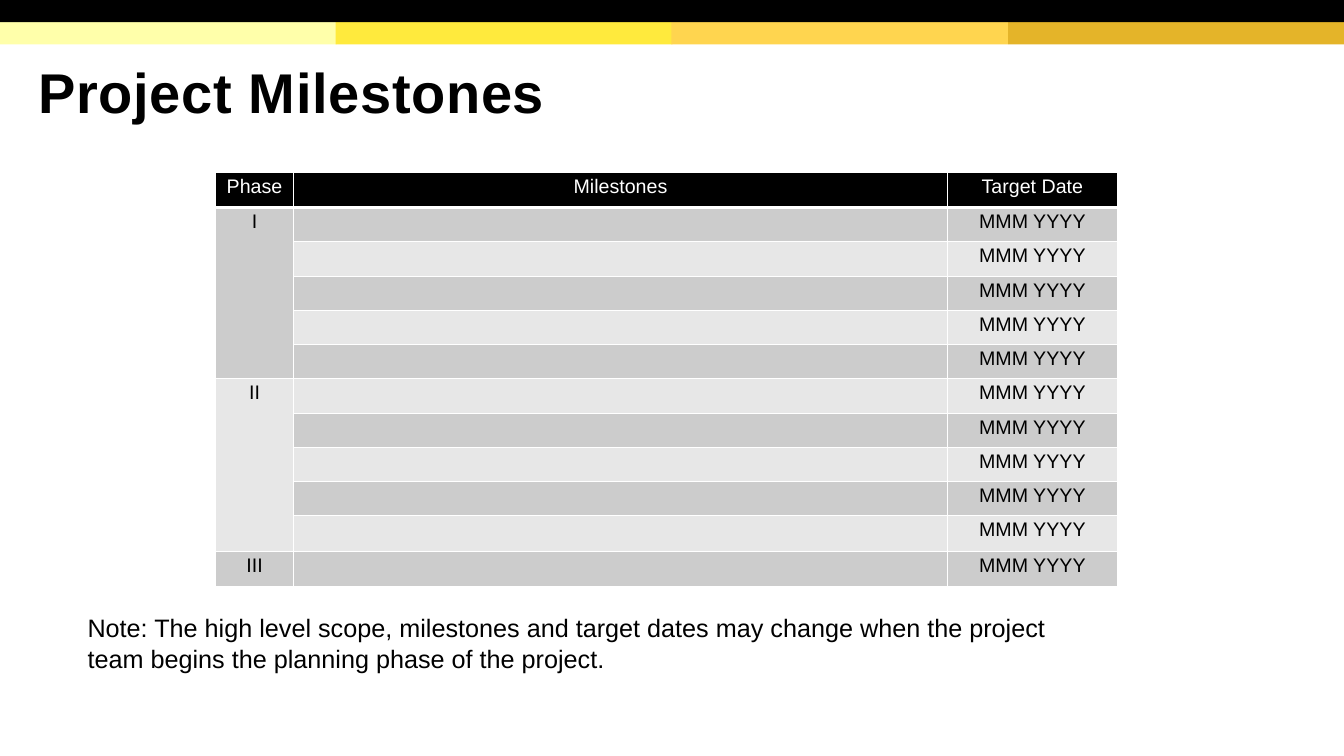
from dataclasses import dataclass

from lxml import etree
from pptx import Presentation
from pptx import util as u
from pptx.dml.color import RGBColor
from pptx.enum import shapes, text
from pptx.oxml import ns

EMU_PER_PX = 9144  # 100 px to the inch


@dataclass(frozen=True)
class Theme:
    font: str = "Arial"
    ink: str = "000000"
    paper: str = "FFFFFF"
    odd_row: str = "CCCCCC"
    even_row: str = "E7E7E7"
    title_size: int = 40
    table_size: int = 14
    note_size: int = 18


@dataclass(frozen=True)
class Bar:
    left: int
    top: int
    width: int
    height: int
    color: str


@dataclass(frozen=True)
class Phase:
    name: str
    milestones: int


THEME = Theme()
STRIPE_COLORS = ["FFFFAA", "FFEA3D", "FFD54F", "E4B429"]
BARS = [Bar(round(i * 1333 / 4), 22, 334, 22, color) for i, color in enumerate(STRIPE_COLORS)]
BARS.append(Bar(0, 0, 1333, 22, THEME.ink))
HEADINGS = ["Phase", "Milestones", "Target Date"]
PHASES = [Phase("I", 5), Phase("II", 5), Phase("III", 1)]
COLUMN_WIDTHS = [77, 649, 168]
ROW_HEIGHTS = [35] + [34] * 9 + [35] * 2
NOTE = ("Note: The high level scope, milestones and target dates may change "
        "when the project team begins the planning phase of the project.")


def px(length: int) -> int:
    return u.Emu(length * EMU_PER_PX)


def rgb(color: str) -> RGBColor:
    return RGBColor.from_string(color)


def style_span(span, size: int, color: str, bold: bool = False) -> None:
    span.font.name = THEME.font
    span.font.size = u.Pt(size)
    span.font.bold = bold
    span.font.color.rgb = rgb(color)


def add_bar(page, bar: Bar) -> None:
    box = page.shapes.add_shape(shapes.MSO_SHAPE.RECTANGLE, px(bar.left), px(bar.top),
                                px(bar.width), px(bar.height))
    box.shadow.inherit = False
    box.fill.solid()
    box.fill.fore_color.rgb = rgb(bar.color)
    box.line.fill.background()


def set_title(page, words: str) -> None:
    title = page.shapes.title
    title.left, title.top, title.width, title.height = px(28), px(47), px(1265), px(98)
    frame = title.text_frame
    frame.text = words
    frame.auto_size = text.MSO_AUTO_SIZE.NONE
    frame.vertical_anchor = text.MSO_ANCHOR.MIDDLE
    para = frame.paragraphs[0]
    para.alignment = text.PP_ALIGN.LEFT
    para.line_spacing = 0.85
    span = para.runs[0]
    style_span(span, THEME.title_size, THEME.ink, bold=True)
    span.font._element.set("spc", "50")


def set_borders(cell, bottom: int) -> None:
    properties = cell._tc.get_or_add_tcPr()
    for side, width in (("L", 1), ("R", 1), ("T", 1), ("B", bottom)):
        line = etree.SubElement(properties, ns.qn(f"a:ln{side}"), w=str(u.Pt(width)))
        fill = etree.SubElement(line, ns.qn("a:solidFill"))
        etree.SubElement(fill, ns.qn("a:srgbClr"), val=THEME.paper)


def fill_cell(cell, words: str, fill: str, color: str, bottom: int = 1) -> None:
    set_borders(cell, bottom)
    cell.fill.solid()
    cell.fill.fore_color.rgb = rgb(fill)
    cell.margin_left = cell.margin_right = px(6)
    cell.margin_top = cell.margin_bottom = 0
    if words:
        cell.text_frame.text = words
        para = cell.text_frame.paragraphs[0]
        para.alignment = text.PP_ALIGN.CENTER
        para.line_spacing = 1.15
        style_span(para.runs[0], THEME.table_size, color)


def add_milestone_table(page) -> None:
    table = page.shapes.add_table(len(ROW_HEIGHTS), len(HEADINGS), px(214), px(171),
                                  px(sum(COLUMN_WIDTHS)), px(sum(ROW_HEIGHTS))).table
    for column, width in zip(table.columns, COLUMN_WIDTHS):
        column.width = px(width)
    for row, height in zip(table.rows, ROW_HEIGHTS):
        row.height = px(height)

    for i, heading in enumerate(HEADINGS):
        fill_cell(table.cell(0, i), heading, THEME.ink, THEME.paper, bottom=3)

    # One row per milestone, with the phase cell merged down its rows
    first = 1
    for phase in PHASES:
        last = first + phase.milestones - 1
        for row in range(first, last + 1):
            fill = THEME.odd_row if row % 2 else THEME.even_row
            name = phase.name if row == first else ""
            for i, words in enumerate([name, "", "MMM YYYY"]):
                fill_cell(table.cell(row, i), words, fill, THEME.ink)
        if last > first:
            table.cell(first, 0).merge(table.cell(last, 0))
        first = last + 1


def add_note(page, words: str) -> None:
    frame = page.shapes.add_textbox(px(77), px(603), px(970), px(71)).text_frame
    frame.word_wrap = True
    frame.auto_size = text.MSO_AUTO_SIZE.SHAPE_TO_FIT_TEXT
    frame.text = words
    style_span(frame.paragraphs[0].runs[0], THEME.note_size, THEME.ink)


def main() -> None:
    deck = Presentation()
    deck.slide_width, deck.slide_height = px(1333), px(750)
    page = deck.slides.add_slide(deck.slide_layouts.get_by_name("Title Only"))

    # Colour bands along the top edge
    for bar in BARS:
        add_bar(page, bar)

    # Title, table and note
    set_title(page, "Project Milestones")
    add_milestone_table(page)
    add_note(page, NOTE)
    deck.save("out.pptx")


if __name__ == "__main__":
    main()
